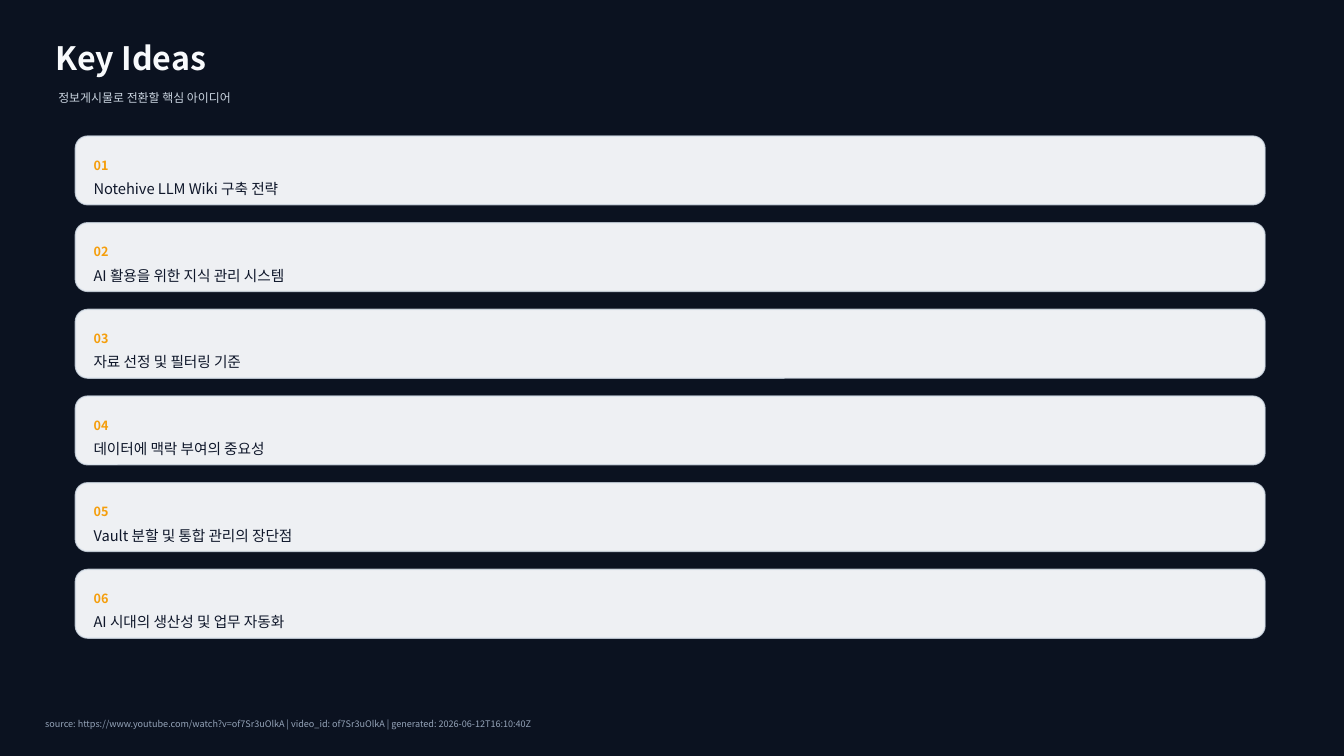
import pptx
import pptx.util
import pptx.dml.color
import pptx.enum.shapes
import pptx.enum.text
import pptx.oxml
import pptx.oxml.ns
from pptx.util import Cm

TITLE = "Key Ideas"
SUBTITLE = "정보게시물로 전환할 핵심 아이디어"
IDEAS = [
    "Notehive LLM Wiki 구축 전략",
    "AI 활용을 위한 지식 관리 시스템",
    "자료 선정 및 필터링 기준",
    "데이터에 맥락 부여의 중요성",
    "Vault 분할 및 통합 관리의 장단점",
    "AI 시대의 생산성 및 업무 자동화",
]
SOURCE = (
    "source: https://www.youtube.com/watch?v=of7Sr3uOlkA | "
    "video_id: of7Sr3uOlkA | generated: 2026-06-12T16:10:40Z"
)

FONT = "Noto Sans CJK KR"
COLORS = {
    "background": "0B1220",
    "title": "F8FAFC",
    "subtitle": "CBD5E1",
    "card": "F8FAFC",
    "border": "D7E0EA",
    "number": "F59E0B",
    "idea": "0F172A",
    "source": "94A3B8",
}

CARD_LEFT, CARD_WIDTH, CARD_HEIGHT = 1.9, 29.98, 1.73
FIRST_TOP, LAST_TOP = 3.43, 14.35
PITCH = (LAST_TOP - FIRST_TOP) / (len(IDEAS) - 1)
PADDING = 0.46


def rgb(role):
    return pptx.dml.color.RGBColor.from_string(COLORS[role])


def add_text(slide, text, role, size, left, top, width, height, bold=False):
    box = slide.shapes.add_textbox(Cm(left), Cm(top), Cm(width), Cm(height))
    frame = box.text_frame
    frame.text = text
    frame.word_wrap = True
    frame.vertical_anchor = pptx.enum.text.MSO_ANCHOR.MIDDLE
    frame.margin_left = frame.margin_right = 0
    frame.margin_top = frame.margin_bottom = 0
    font = frame.paragraphs[0].runs[0].font
    font.name = FONT
    font.size = pptx.util.Pt(size)
    font.bold = bold
    font.color.rgb = rgb(role)
    east_asian = pptx.oxml.parse_xml(
        f'<a:ea {pptx.oxml.ns.nsdecls("a")} typeface="{FONT}"/>'
    )
    font._element.find(pptx.oxml.ns.qn("a:latin")).addnext(east_asian)


def set_opacity(properties, percent):
    color = properties.find(
        f'{pptx.oxml.ns.qn("a:solidFill")}/{pptx.oxml.ns.qn("a:srgbClr")}'
    )
    color.append(pptx.oxml.parse_xml(
        f'<a:alpha {pptx.oxml.ns.nsdecls("a")} val="{percent * 1000}"/>'
    ))


def add_card(slide, top):
    card = slide.shapes.add_shape(
        pptx.enum.shapes.MSO_SHAPE.ROUNDED_RECTANGLE,
        Cm(CARD_LEFT), Cm(top), Cm(CARD_WIDTH), Cm(CARD_HEIGHT),
    )
    card.adjustments[0] = 0.18
    card.shadow.inherit = False
    card.fill.solid()
    card.fill.fore_color.rgb = rgb("card")
    card.line.color.rgb = rgb("border")
    card.line.width = pptx.util.Pt(1)
    properties = card._element.spPr
    set_opacity(properties, 96)
    set_opacity(properties.find(pptx.oxml.ns.qn("a:ln")), 80)


def main():
    deck = pptx.Presentation()
    deck.slide_width, deck.slide_height = Cm(33.87), Cm(19.05)
    slide = deck.slides.add_slide(deck.slide_layouts[6])
    slide.background.fill.solid()
    slide.background.fill.fore_color.rgb = rgb("background")

    add_text(slide, TITLE, "title", 23, 1.4, 0.89, 30.48, 1.14, bold=True)
    add_text(slide, SUBTITLE, "subtitle", 8.5, 1.47, 2.11, 29.21, 0.71)

    text_left = CARD_LEFT + PADDING
    text_width = CARD_WIDTH - 2 * PADDING
    for index, idea in enumerate(IDEAS):
        top = FIRST_TOP + index * PITCH
        add_card(slide, top)
        add_text(slide, f"{index + 1:02}", "number", 9,
                 text_left, top + 0.41, text_width, 0.64, bold=True)
        add_text(slide, idea, "idea", 10.5,
                 text_left, top + 1.27, text_width, 0.1)

    add_text(slide, SOURCE, "source", 6.5, 1.14, 17.91, 31.5, 0.64)
    deck.save("out.pptx")


if __name__ == "__main__":
    main()
